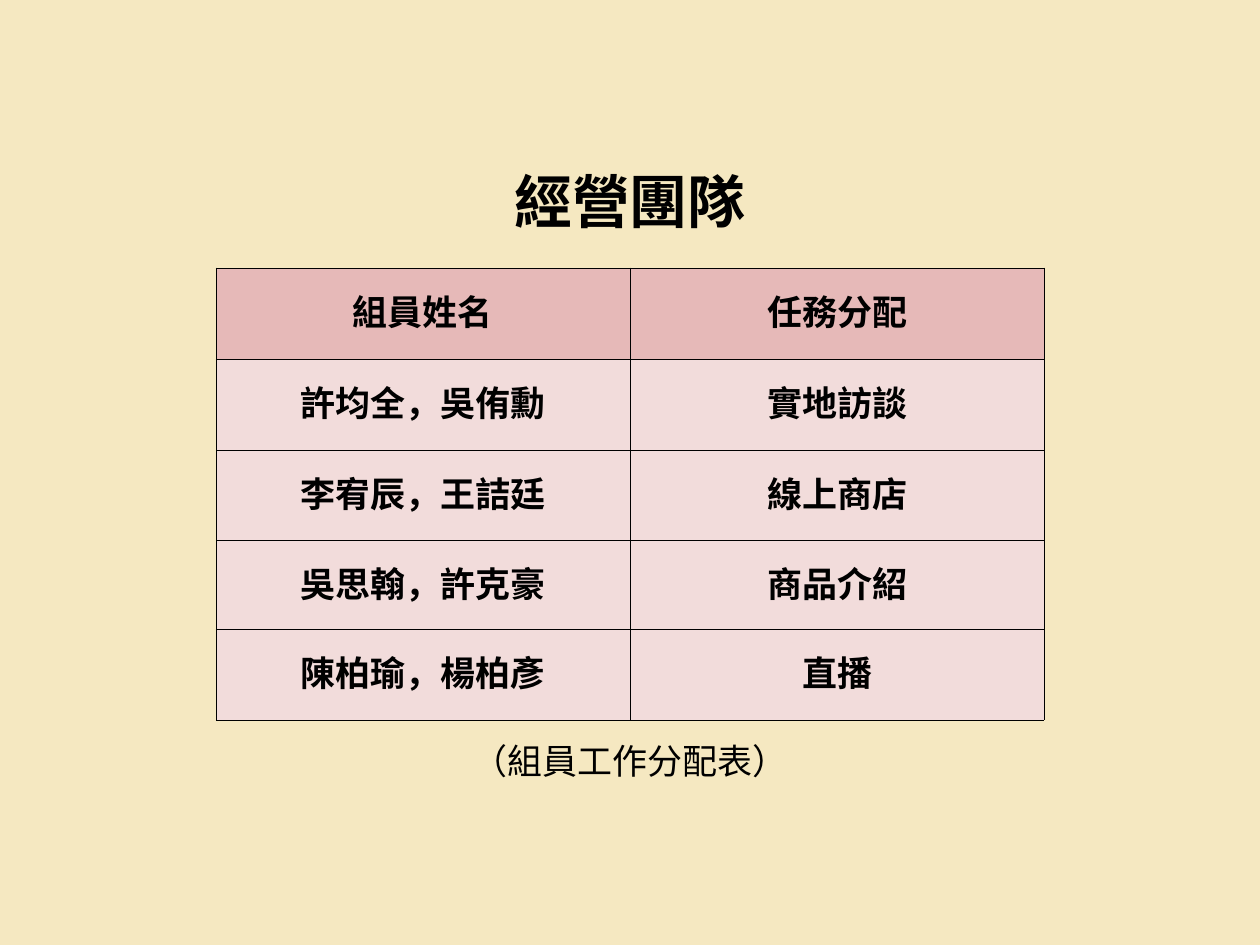
from dataclasses import dataclass

from lxml.etree import SubElement
from pptx import Presentation
from pptx.dml.color import RGBColor
from pptx.enum.text import MSO_AUTO_SIZE as AutoSize
from pptx.enum.text import MSO_VERTICAL_ANCHOR as Anchor
from pptx.enum.text import PP_PARAGRAPH_ALIGNMENT as Alignment
from pptx.oxml.ns import qn
from pptx.slide import Slide
from pptx.table import _Cell as Cell
from pptx.text.text import _Paragraph as Paragraph
from pptx.util import Cm, Pt

CREAM = RGBColor(0xF5, 0xE8, 0xC1)
ROSE = RGBColor(0xE6, 0xB9, 0xB8)
BLUSH = RGBColor(0xF2, 0xDC, 0xDB)
BLACK = RGBColor(0, 0, 0)
MARGINS = ("margin_left", "margin_top", "margin_right", "margin_bottom")


@dataclass(frozen=True)
class TextStyle:
    font: str
    size: float
    line_spacing: float
    bold: bool = False


@dataclass(frozen=True)
class Label:
    text: str
    left: float
    top: float
    width: float
    height: float
    style: TextStyle


TITLE_STYLE = TextStyle("Arial", 49.5, 53.5, True)
CAPTION_STYLE = TextStyle("Arial", 30, 24.3)
CELL_STYLE = TextStyle("Noto Sans CJK SC", 30, 38.5, True)

LABELS = (
    Label("經營團隊", 13.2, 5.21, 11.7, 1.88, TITLE_STYLE),
    Label("（組員工作分配表）", 14.15, 22.78, 9.8, 0.86, CAPTION_STYLE),
)
ASSIGNMENTS = (
    ("組員姓名", "任務分配"),
    ("許均全，吳侑勳", "實地訪談"),
    ("李宥辰，王詰廷", "線上商店"),
    ("吳思翰，許克豪", "商品介紹"),
    ("陳柏瑜，楊柏彥", "直播"),
)
TABLE_LEFT, TABLE_TOP, COLUMN_WIDTH = 6.53, 8.1, 12.52
ROW_HEIGHTS = (2.75, 2.75, 2.75, 2.67, 2.75)


def set_attributes(target: object, values: dict) -> None:
    for name, value in values.items():
        setattr(target, name, value)


def write_text(paragraph: Paragraph, text: str, style: TextStyle) -> None:
    set_attributes(paragraph, {
        "alignment": Alignment.CENTER,
        "line_spacing": Pt(style.line_spacing),
    })
    run = paragraph.add_run()
    run.text = text
    set_attributes(run.font, {
        "name": style.font,
        "size": Pt(style.size),
        "bold": style.bold,
    })
    run.font.color.rgb = BLACK
    properties = run.font._element
    SubElement(properties, qn("a:ea"), typeface=style.font)


def draw_label(slide: Slide, label: Label) -> None:
    shape = slide.shapes.add_textbox(
        Cm(label.left), Cm(label.top), Cm(label.width), Cm(label.height))
    frame = shape.text_frame
    set_attributes(frame, {
        **dict.fromkeys(MARGINS, 0),
        "word_wrap": True,
        "auto_size": AutoSize.SHAPE_TO_FIT_TEXT,
    })
    write_text(frame.paragraphs[0], label.text, label.style)


def draw_borders(cell: Cell) -> None:
    properties = cell._tc.get_or_add_tcPr()
    for side in ("a:lnL", "a:lnR", "a:lnT", "a:lnB"):
        line = SubElement(properties, qn(side), w=str(Pt(0.37)))
        fill = SubElement(line, qn("a:solidFill"))
        SubElement(fill, qn("a:srgbClr"), val=str(BLACK))


def fill_cell(cell: Cell, text: str, color: RGBColor) -> None:
    set_attributes(cell, {
        **dict.fromkeys(MARGINS, Cm(0.15)),
        "vertical_anchor": Anchor.MIDDLE,
    })
    draw_borders(cell)
    cell.fill.solid()
    cell.fill.fore_color.rgb = color
    write_text(cell.text_frame.paragraphs[0], text, CELL_STYLE)


def draw_assignments(slide: Slide) -> None:
    column_count = len(ASSIGNMENTS[0])
    table = slide.shapes.add_table(
        len(ASSIGNMENTS), column_count, Cm(TABLE_LEFT), Cm(TABLE_TOP),
        Cm(COLUMN_WIDTH * column_count), Cm(sum(ROW_HEIGHTS))).table
    table.horz_banding = False
    for column in table.columns:
        column.width = Cm(COLUMN_WIDTH)
    for row_index, texts in enumerate(ASSIGNMENTS):
        table.rows[row_index].height = Cm(ROW_HEIGHTS[row_index])
        color = BLUSH if row_index else ROSE
        for column_index, text in enumerate(texts):
            fill_cell(table.cell(row_index, column_index), text, color)


def main() -> None:
    presentation = Presentation()
    set_attributes(presentation, {
        "slide_width": Cm(38.1),
        "slide_height": Cm(28.58),
    })
    slide = presentation.slides.add_slide(presentation.slide_layouts[6])
    slide.background.fill.solid()
    slide.background.fill.fore_color.rgb = CREAM
    for label in LABELS:
        draw_label(slide, label)
    draw_assignments(slide)
    presentation.save("out.pptx")


if __name__ == "__main__":
    main()
